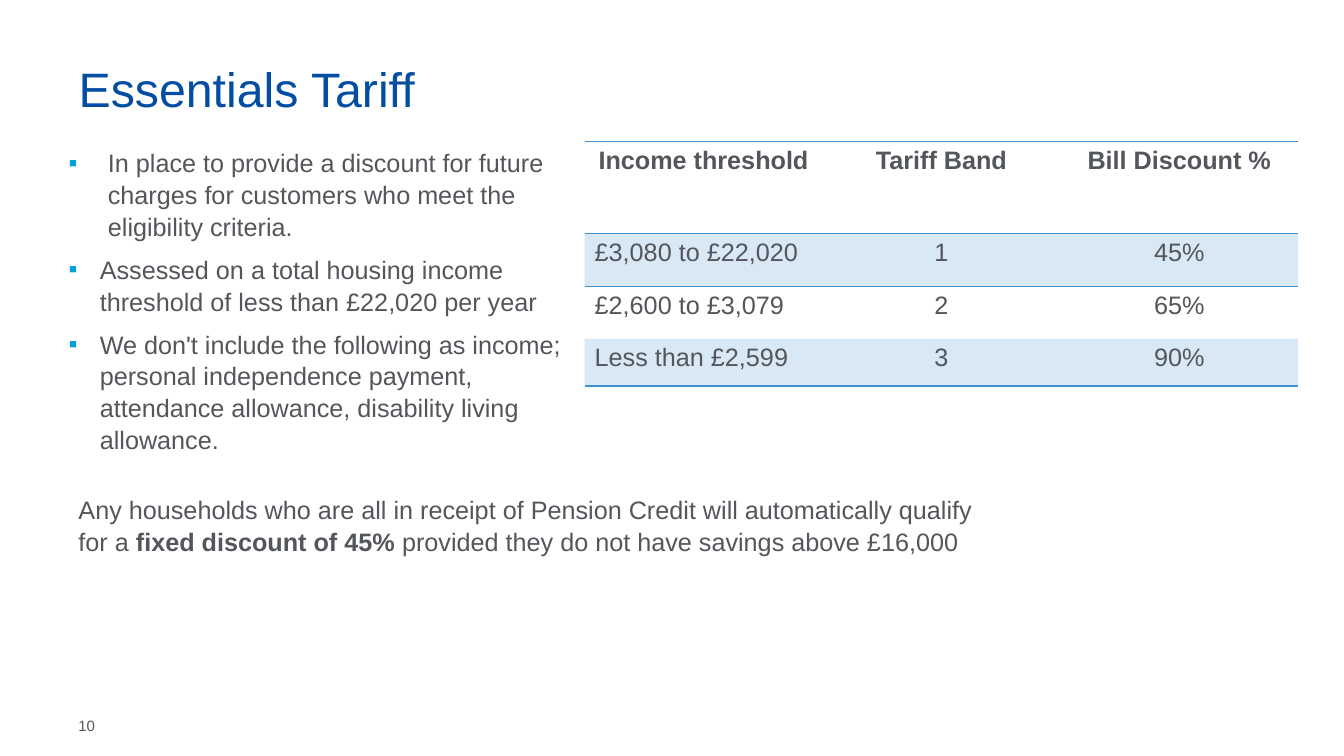
from lxml import etree
from pptx import Presentation
from pptx.dml.color import RGBColor
from pptx.enum.text import MSO_ANCHOR, MSO_AUTO_SIZE, PP_ALIGN
from pptx.oxml import parse_xml
from pptx.oxml.ns import nsdecls, qn
from pptx.util import Inches, Pt

LEFT, MID = PP_ALIGN.LEFT, PP_ALIGN.CENTER
TOP, CENTRE = MSO_ANCHOR.TOP, MSO_ANCHOR.MIDDLE
FIXED = MSO_AUTO_SIZE.NONE
NAVY = RGBColor(0x03, 0x4E, 0xA2)
GREY = RGBColor(0x53, 0x56, 0x5A)
CYAN = RGBColor(0x00, 0x9F, 0xDF)
BLUE = RGBColor(0x3C, 0x92, 0xD0)
PLAIN = "{2D5ABB26-0587-4C30-8999-92F81FD0307C}"

deck = Presentation()
deck.slide_width, deck.slide_height = Inches(13.33), Inches(7.5)
COL, ROW = deck.slide_width / 100, deck.slide_height / 100
EDGE, HEAD = 5.1, 18.67
slide = deck.slides.add_slide(deck.slide_layouts[1])


def place(box, x, y, wide, high, anchor=TOP):
    box.left, box.top = int(x * COL), int(y * ROW)
    box.width, box.height = int(wide * COL), int(high * ROW)
    frame = box.text_frame
    frame.word_wrap = True
    frame.auto_size = FIXED
    frame.vertical_anchor = anchor
    return frame


def write(para, text, size=18, hue=GREY, bold=False, align=LEFT):
    para.alignment = align
    run = para.add_run()
    run.text = text
    run.font.name = "Arial"
    run.font.size = Pt(size)
    run.font.bold = bold
    run.font.color.rgb = hue


title = place(slide.shapes.title, EDGE, 7.47, 89.8, 14).paragraphs[0]
title.line_spacing = Pt(40)
write(title, "Essentials Tariff", 34.5, NAVY)

body = place(slide.placeholders[1], EDGE, HEAD, 38.4, 49.2)
body.margin_left = 0
points = [
    ("In place to provide a discount for future charges for customers who meet the eligibility criteria.", 0.39),
    ("Assessed on a total housing income threshold of less than £22,020 per year", 0.31),
    ("We don't include the following as income; personal independence payment, attendance allowance, disability living allowance.", 0.31),
]
for rank, (text, dent) in enumerate(points):
    para = body.add_paragraph() if rank else body.paragraphs[0]
    props = para._p.get_or_add_pPr()
    props.set("marL", str(Inches(dent)))
    props.set("indent", str(-Inches(dent)))
    tint = etree.SubElement(props, qn("a:buClr"))
    etree.SubElement(tint, qn("a:srgbClr"), val=str(CYAN))
    etree.SubElement(props, qn("a:buFont"), typeface="Arial")
    etree.SubElement(props, qn("a:buChar"), char="▪")
    para.line_spacing = 1.05
    para.space_before = Pt(8 if rank else 0)
    write(para, text)

cells = [
    ("Income threshold", "Tariff Band", "Bill Discount %"),
    ("£3,080 to £22,020", "1", "45%"),
    ("£2,600 to £3,079", "2", "65%"),
    ("Less than £2,599", "3", "90%"),
]
highs = [12.27, 6.93, 6.93, 6.27]
rules = {0: ("lnT", "lnB"), 1: ("lnT",), 3: ("lnB",)}
wide = 17.7
table = slide.shapes.add_table(
    len(cells), 3, int(43.5 * COL), int(HEAD * ROW),
    int(3 * wide * COL), int(sum(highs) * ROW)).table
table.first_row = table.horz_banding = False
table._tbl.tblPr.find(qn("a:tableStyleId")).text = PLAIN
for col in table.columns:
    col.width = int(wide * COL)
for r, (line, high) in enumerate(zip(cells, highs)):
    table.rows[r].height = int(high * ROW)
    for c, text in enumerate(line):
        cell = table.cell(r, c)
        write(cell.text_frame.paragraphs[0], text, bold=r == 0,
              align=LEFT if r and c == 0 else MID)
        props = cell._tc.get_or_add_tcPr()
        for side in rules.get(r, ()):
            props.append(parse_xml(
                f'<a:{side} {nsdecls("a")} w="12700"><a:solidFill>'
                f'<a:srgbClr val="{BLUE}"/></a:solidFill></a:{side}>'))
        if r % 2:
            cell.fill.solid()
            cell.fill.fore_color.rgb = BLUE
            shade = props.find(qn("a:solidFill")).find(qn("a:srgbClr"))
            etree.SubElement(shade, qn("a:alpha"), val="20000")
        else:
            cell.fill.background()

note = place(slide.shapes.add_textbox(0, 0, 0, 0), EDGE, 64.53, 70.59, 9.47).paragraphs[0]
note.line_spacing = 1.05
for text, bold in [
    ("Any households who are all in receipt of Pension Credit will automatically qualify for a ", False),
    ("fixed discount of 45% ", True),
    ("provided they do not have savings above £16,000", False),
]:
    write(note, text, bold=bold)

page = place(slide.shapes.add_textbox(0, 0, 0, 0), EDGE, 93.33, 3.9, 5.33, CENTRE)
write(page.paragraphs[0], "10", 10.7)

deck.save("out.pptx")
